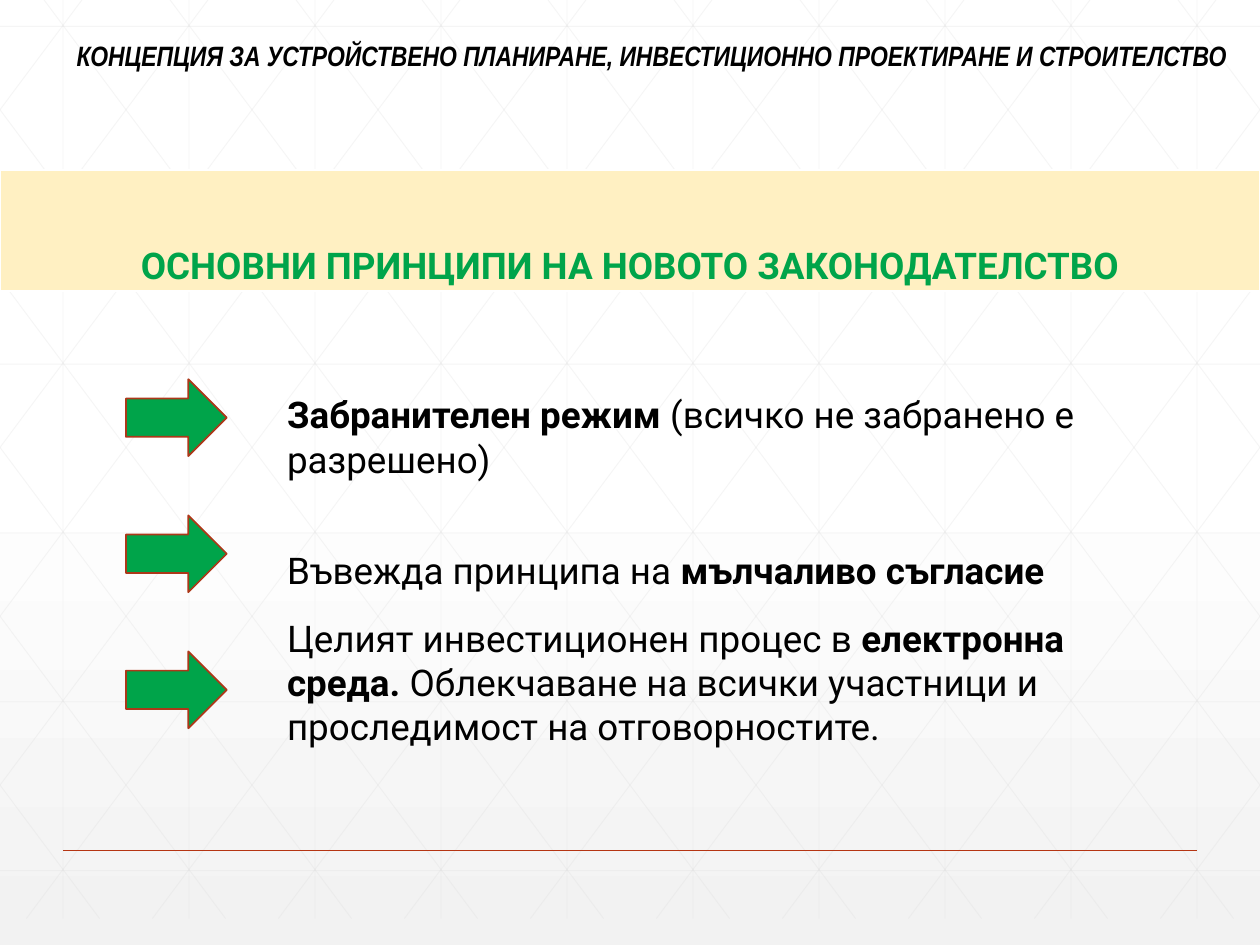
from lxml import etree
from pptx import Presentation
from pptx.dml.color import RGBColor
from pptx.enum.shapes import MSO_CONNECTOR, MSO_SHAPE
from pptx.enum.text import MSO_ANCHOR, PP_ALIGN
from pptx.oxml.ns import qn
from pptx.util import Inches, Pt

STRAIGHT = MSO_CONNECTOR.STRAIGHT
RECTANGLE, RIGHT_ARROW = MSO_SHAPE.RECTANGLE, MSO_SHAPE.RIGHT_ARROW
BOTTOM, MIDDLE, TOP = MSO_ANCHOR.BOTTOM, MSO_ANCHOR.MIDDLE, MSO_ANCHOR.TOP
CENTER, LEFT = PP_ALIGN.CENTER, PP_ALIGN.LEFT

WIDTH, HEIGHT = 10, 7.5
GREEN = "00A44A"
HEADER_FONT = {"name": "Arial Narrow", "size": Pt(16), "bold": True, "italic": True}
TITLE_FONT = {"name": "Roboto", "size": Pt(21), "bold": True}
BODY_FONT = {"name": "Roboto", "size": Pt(21)}

# Each principle: line spacing and (text, bold) runs
PRINCIPLES = [
    (1, [("Забранителен режим ", True), ("(всичко не забранено е разрешено)", False)]),
    (2, [("Въвежда принципа на ", False), ("мълчаливо съгласие", True)]),
    (1, [("Целият инвестиционен процес в ", False), ("електронна среда. ", True),
         ("Облекчаване на всички участници и проследимост на отговорностите.", False)]),
]


def color(value):
    return RGBColor.from_string(value)


def inches(box):
    return [Inches(length) for length in box]


def add_run(paragraph, text, font_format, font_color="000000"):
    run = paragraph.add_run()
    run.text = text
    for name, value in font_format.items():
        setattr(run.font, name, value)
    run.font.color.rgb = color(font_color)


def set_frame(shape, anchor):
    frame = shape.text_frame
    frame.word_wrap = True
    frame.vertical_anchor = anchor
    return frame


def add_line(slide, start, end, line_color, width, opacity=None):
    line = slide.shapes.add_connector(STRAIGHT, *inches(start + end))
    line.line.color.rgb = color(line_color)
    line.line.width = Pt(width)
    properties = line._element.spPr
    if opacity is not None:
        fill = next(properties.iter(qn("a:srgbClr")))
        etree.SubElement(fill, qn("a:alpha"), val=str(opacity * 1000))
    etree.SubElement(properties, qn("a:effectLst"))


def add_filled_shape(slide, kind, box, fill, line_color, line_width):
    shape = slide.shapes.add_shape(kind, *inches(box))
    shape.shadow.inherit = False
    shape.fill.solid()
    shape.fill.fore_color.rgb = color(fill)
    shape.line.color.rgb = color(line_color)
    shape.line.width = Pt(line_width)
    return shape


def set_background(slide):
    fill = slide.background.fill
    fill.gradient()
    fill.gradient_angle = 270
    stops = next(slide.background._cSld.iter(qn("a:gsLst")))
    for stop in list(stops):
        stops.remove(stop)
    for position, value in ((0, "FFFFFF"), (49, "FFFFFF"), (100, "F2F2F2")):
        stop = etree.SubElement(stops, qn("a:gs"), pos=str(position * 1000))
        etree.SubElement(stop, qn("a:srgbClr"), val=value)


def add_grid(slide, box):
    left, top, width, height = box
    right, bottom = left + width, top + height
    slope = 1.34
    segments = [((left + 0.5 + i, top), (left + 0.5 + i, bottom)) for i in range(10)]
    segments += [((left, top + 0.21 + slope * i), (right, top + 0.21 + slope * i))
                 for i in range(6)]
    # Diagonals one inch apart, clipped to the box, with their mirror images
    for step in range(-5, 10):
        origin = left + 0.35 + step
        x1, x2 = max(origin, left), min(origin + height / slope, right)
        y1, y2 = (top + slope * (x - origin) for x in (x1, x2))
        segments += [((x1, y1), (x2, y2)),
                     ((left + right - x1, y1), (left + right - x2, y2))]
    for start, end in segments:
        add_line(slide, start, end, "D9D9D9", 0.5, 25)


def add_header(slide, box):
    header = slide.shapes.add_textbox(*inches(box))
    paragraph = set_frame(header, TOP).paragraphs[0]
    add_run(paragraph, "КОНЦЕПЦИЯ ЗА УСТРОЙСТВЕНО ПЛАНИРАНЕ, ИНВЕСТИЦИОННО "
            "ПРОЕКТИРАНЕ И СТРОИТЕЛСТВО", HEADER_FONT)


def add_title(slide, box):
    band = add_filled_shape(slide, RECTANGLE, box, "FFF0C2", "FFFFFF", 0.75)
    frame = set_frame(band, BOTTOM)
    frame.margin_top = frame.margin_bottom = Inches(0.03)
    paragraph = frame.paragraphs[0]
    paragraph.alignment = CENTER
    paragraph.line_spacing = 1.5
    add_run(paragraph, "ОСНОВНИ ПРИНЦИПИ НА НОВОТО ЗАКОНОДАТЕЛСТВО", TITLE_FONT, GREEN)


def add_principles(slide, box):
    frame = set_frame(slide.shapes.add_textbox(*inches(box)), MIDDLE)
    for index, (spacing, runs) in enumerate(PRINCIPLES):
        paragraph = frame.add_paragraph() if index else frame.paragraphs[0]
        paragraph.alignment = LEFT
        paragraph.line_spacing = spacing
        if index:
            paragraph.space_before = Pt(13.5)
        for text, bold in runs:
            add_run(paragraph, text, {**BODY_FONT, "bold": bold})


def add_arrows(slide, box):
    left, top, width, height = box
    arrow_height = 0.61
    gap = (height - arrow_height) / (len(PRINCIPLES) - 1)
    for index in range(len(PRINCIPLES)):
        add_filled_shape(slide, RIGHT_ARROW, (left, top + index * gap, width, arrow_height),
                         GREEN, "AC3819", 1)


def main():
    presentation = Presentation()
    presentation.slide_width, presentation.slide_height = Inches(WIDTH), Inches(HEIGHT)
    slide = presentation.slides.add_slide(presentation.slide_layouts[6])
    set_background(slide)
    add_grid(slide, (0, 0, WIDTH, 7.29))
    add_line(slide, (0.5, 6.75), (9.5, 6.75), "B53513", 1)  # footer rule
    add_header(slide, (0.51, 0.26, 9.49, 0.37))
    add_title(slide, (0, 1.35, WIDTH, 0.96))
    add_principles(slide, (2.18, 2.24, 6.68, 4.57))
    add_arrows(slide, (1, 3.01, 0.8, 2.77))
    presentation.save("out.pptx")


if __name__ == "__main__":
    main()
